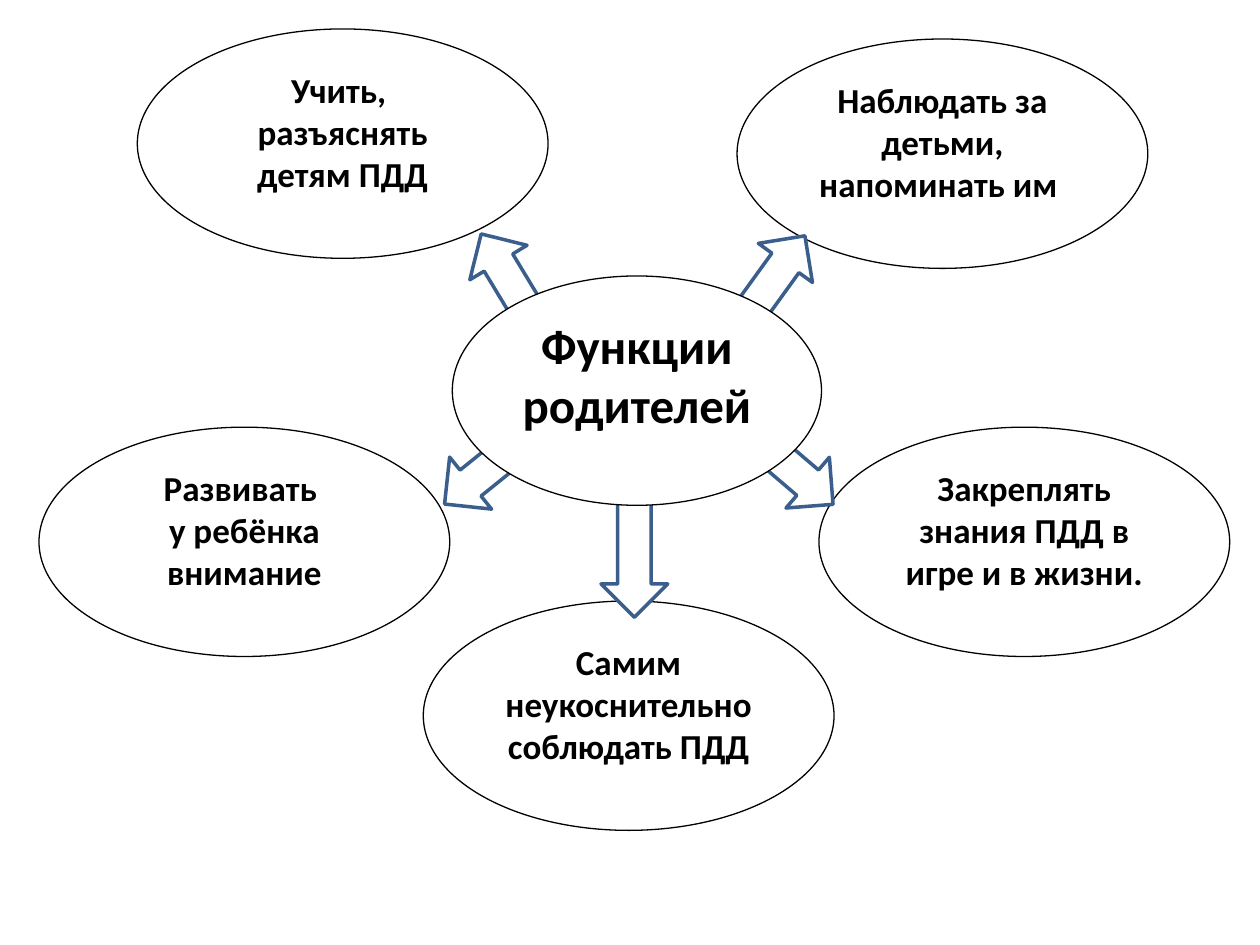
from dataclasses import dataclass

from pptx import Presentation
from pptx.dml.color import RGBColor
from pptx.enum.shapes import MSO_SHAPE
from pptx.enum.text import MSO_ANCHOR, PP_ALIGN
from pptx.util import Inches, Pt


@dataclass(frozen=True)
class Theme:
    font: str = "Calibri"
    ink: str = "000000"
    paper: str = "FFFFFF"
    edge: str = "3A5F8C"
    body: int = 20
    head: int = 28
    thin: float = 0.75
    thick: float = 2


class Chart:
    """Draws ovals and arrows on one slide in one style."""

    def __init__(self, deck, theme):
        self.theme = theme
        self.slide = deck.slides.add_slide(deck.slide_layouts[6])

    def shape(self, kind, box, color, width):
        item = self.slide.shapes.add_shape(kind, *map(Inches, box))
        item.shadow.inherit = False
        item.fill.solid()
        item.fill.fore_color.rgb = RGBColor.from_string(self.theme.paper)
        item.line.color.rgb = RGBColor.from_string(color)
        item.line.width = Pt(width)
        return item

    def oval(self, box, lines, size):
        theme = self.theme
        item = self.shape(MSO_SHAPE.OVAL, box, theme.ink, theme.thin)
        frame = item.text_frame
        frame.word_wrap = True
        frame.vertical_anchor = MSO_ANCHOR.TOP
        frame.text = "\n".join(lines)
        form = {"name": theme.font, "size": Pt(size), "bold": True}
        for para in frame.paragraphs:
            para.alignment = PP_ALIGN.CENTER
            for run in para.runs:
                for key, value in form.items():
                    setattr(run.font, key, value)
                run.font.color.rgb = RGBColor.from_string(theme.ink)

    def arrow(self, left, top, turn):
        theme = self.theme
        box = (left, top, 0.53, 1.07)
        item = self.shape(MSO_SHAPE.DOWN_ARROW, box, theme.edge, theme.thick)
        item.rotation = turn


TASKS = [
    (1.09, 0.23, ["Учить, ", "разъяснять детям ПДД"]),
    (0.31, 3.39, ["Развивать ", "у ребёнка внимание"]),
    (6.5, 3.39, ["Закреплять знания ПДД в игре и в жизни."]),
    (5.85, 0.31, ["Наблюдать за детьми, напоминать им "]),
    (3.36, 4.77, ["Самим неукоснительно соблюдать ПДД"]),
]
ARROWS = [
    (4.77, 3.83, 0),
    (3.68, 3.13, 51.1),
    (5.94, 3.12, 310.5),
    (3.83, 1.78, 148.9),
    (5.81, 1.77, 215.8),
]


def main():
    deck = Presentation()
    deck.slide_width, deck.slide_height = Inches(10), Inches(7.5)
    theme = Theme()
    chart = Chart(deck, theme)
    for left, top, lines in TASKS:
        chart.oval((left, top, 3.26, 1.82), lines, theme.body)
    for place in ARROWS:
        chart.arrow(*place)
    chart.oval((3.59, 2.19, 2.93, 1.82), ["Функции родителей"], theme.head)
    deck.save("out.pptx")


if __name__ == "__main__":
    main()
